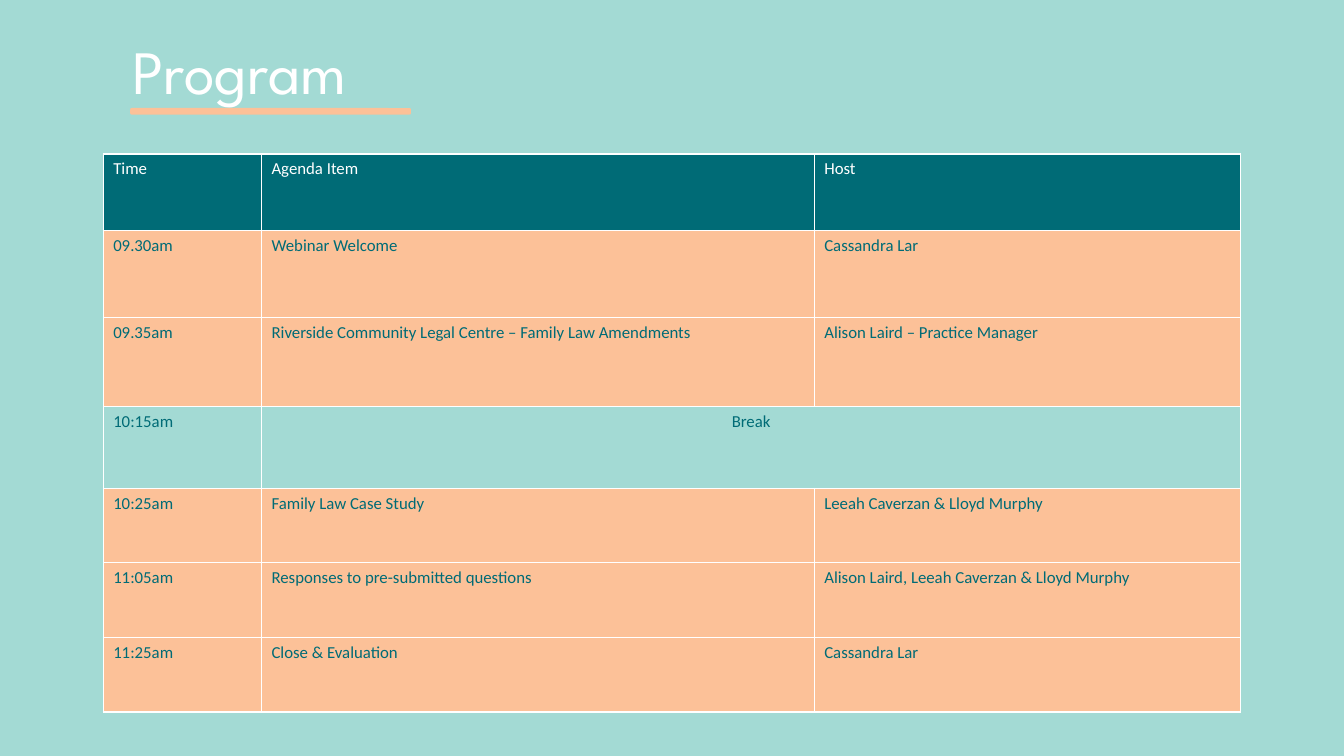
"""Build the webinar program slide with its agenda table."""
from pptx import Presentation
from pptx import util as u
from pptx.dml.color import RGBColor
from pptx.enum import shapes, text

COLORS = {"mint": "A3DAD4", "teal": "006B76", "peach": "FCC198", "white": "FFFFFF"}
AGENDA = [
    ("Time", "Agenda Item", "Host"),
    ("09.30am", "Webinar Welcome", "Cassandra Lar"),
    ("09.35am", "Riverside Community Legal Centre – Family Law Amendments",
     "Alison Laird – Practice Manager"),
    ("10:15am", "Break"),
    ("10:25am", "Family Law Case Study", "Leeah Caverzan & Lloyd Murphy"),
    ("11:05am", "Responses to pre-submitted questions",
     "Alison Laird, Leeah Caverzan & Lloyd Murphy"),
    ("11:25am", "Close & Evaluation", "Cassandra Lar"),
]
COL_WIDTHS = [3.99, 13.93, 10.75]
ROW_HEIGHTS = [1.93, 2.19, 2.24, 2.06, 1.88, 1.88, 1.88]


def color(name):
    return RGBColor.from_string(COLORS[name])


def write(tf, content, size=12, font="Calibri", ink="teal", align=text.PP_ALIGN.LEFT,
          before=0, spacing=1.0):
    tf.word_wrap = True
    p = tf.paragraphs[0]
    p.alignment = align
    p.space_before = u.Pt(before)
    p.line_spacing = spacing
    r = p.add_run()
    r.text = content
    r.font.size = u.Pt(size)
    r.font.name = font
    r.font.bold = False
    r.font.color.rgb = color(ink)


prs = Presentation()
prs.slide_width, prs.slide_height = u.Cm(33.87), u.Cm(19.05)
s = prs.slides.add_slide(prs.slide_layouts[6])
s.background.fill.solid()
s.background.fill.fore_color.rgb = color("mint")

title = s.shapes.add_textbox(u.Cm(3.1), u.Cm(0.91), u.Cm(23.57), u.Cm(2.64))
write(title.text_frame, "Program", size=44, font="League Spartan", ink="white",
      before=10, spacing=0.9)

underline = s.shapes.add_shape(shapes.MSO_SHAPE.ROUNDED_RECTANGLE,
                               u.Cm(3.3), u.Cm(2.74), u.Cm(7.04), u.Cm(0.13))
underline.shadow.inherit = False
underline.fill.solid()
underline.fill.fore_color.rgb = color("peach")
underline.line.color.rgb = color("peach")
underline.line.width = u.Pt(1)

table = s.shapes.add_table(len(AGENDA), len(COL_WIDTHS), u.Cm(2.6), u.Cm(3.88),
                           u.Cm(sum(COL_WIDTHS)), u.Cm(sum(ROW_HEIGHTS))).table
for column, width in zip(table.columns, COL_WIDTHS):
    column.width = u.Cm(width)

for i, (entries, height) in enumerate(zip(AGENDA, ROW_HEIGHTS)):
    table.rows[i].height = u.Cm(height)
    is_break = len(entries) == 2
    if is_break:
        table.cell(i, 1).merge(table.cell(i, 2))
    for j, entry in enumerate(entries):
        cell = table.cell(i, j)
        cell.fill.solid()
        cell.fill.fore_color.rgb = color("teal" if i == 0 else "mint" if is_break else "peach")
        centred = is_break and j == 1
        write(cell.text_frame, entry, ink="white" if i == 0 else "teal",
              align=text.PP_ALIGN.CENTER if centred else text.PP_ALIGN.LEFT)

prs.save("out.pptx")
